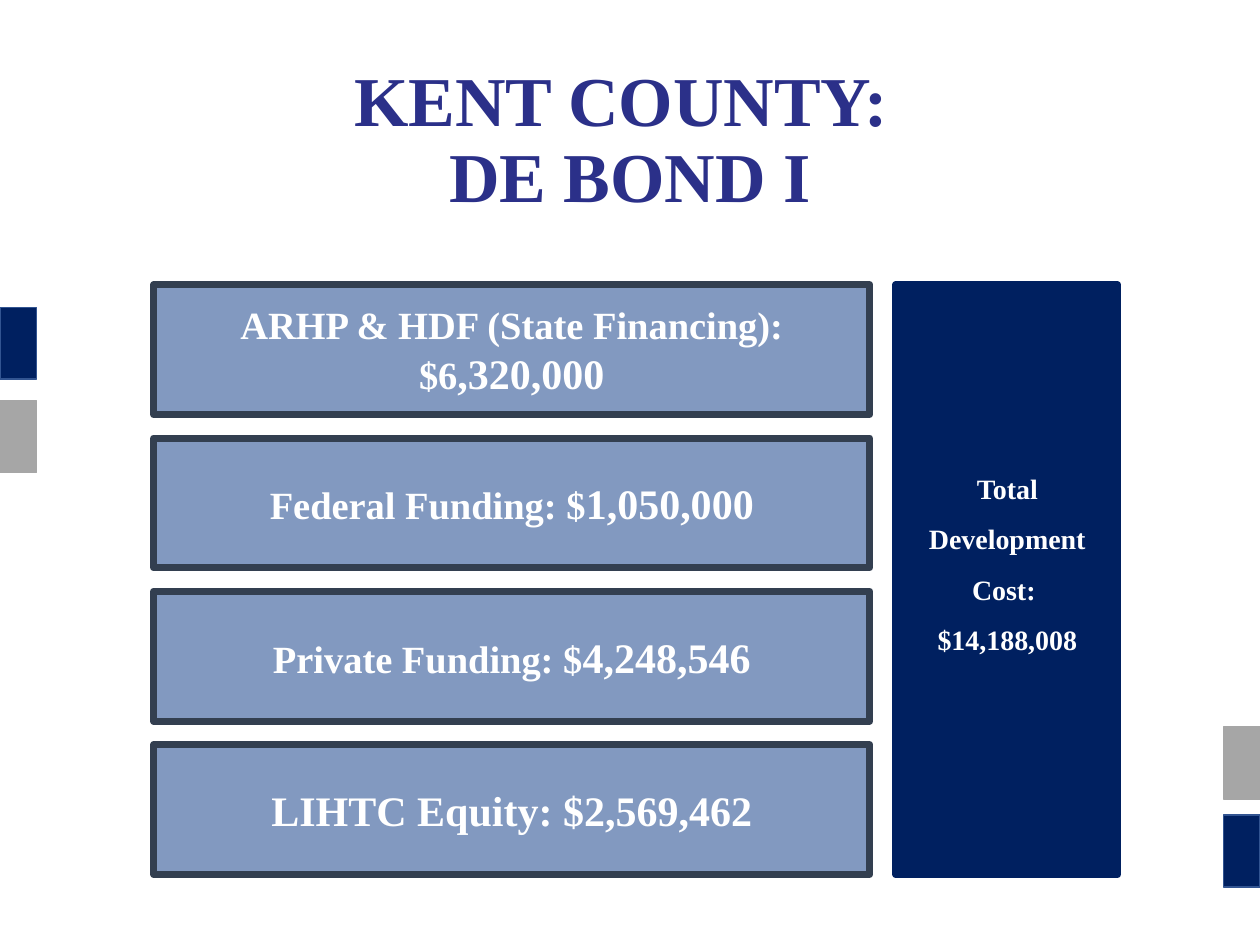
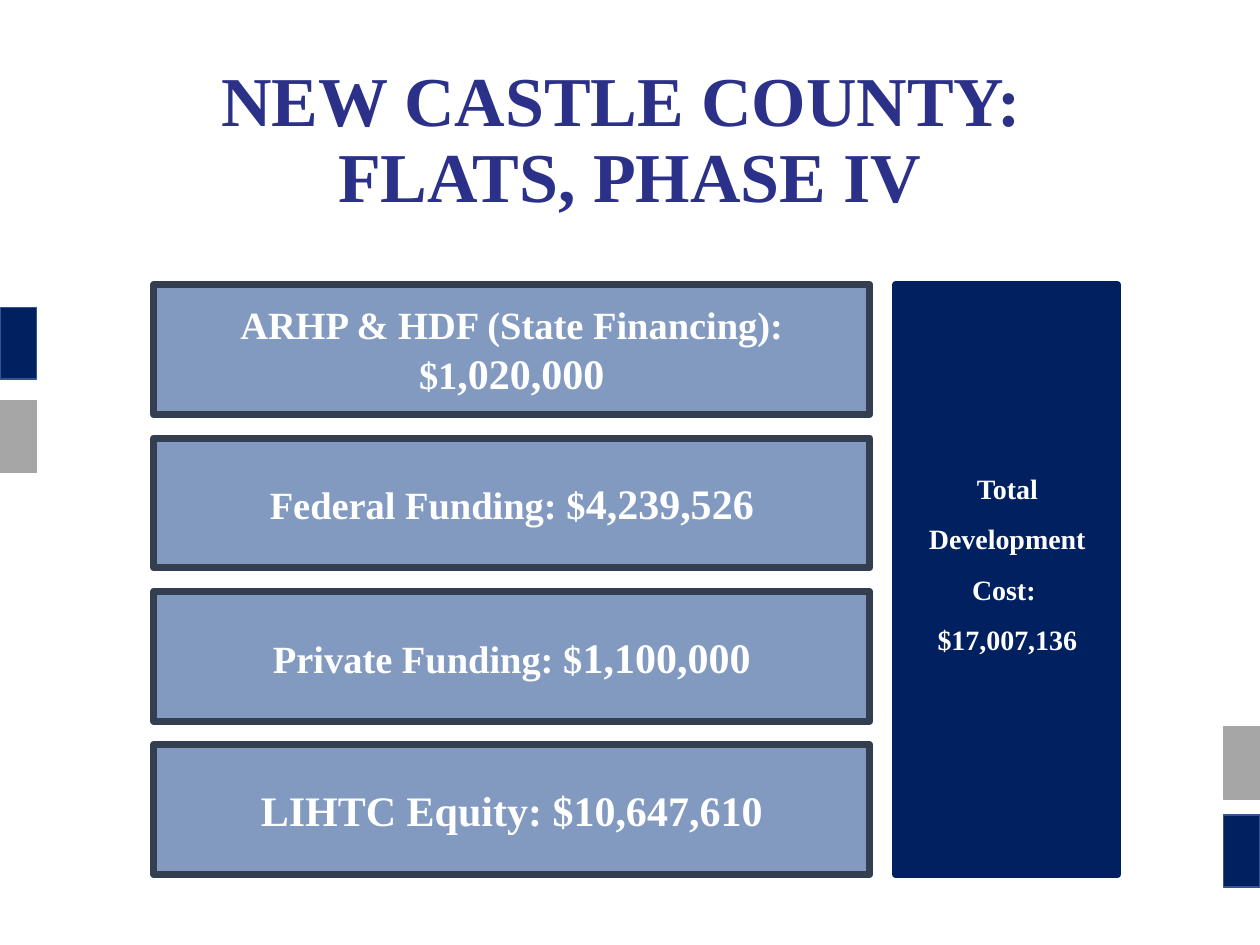
from dataclasses import dataclass
from typing import NamedTuple

from lxml import etree
from pptx import Presentation
from pptx.dml.color import RGBColor
from pptx.enum.shapes import MSO_SHAPE
from pptx.enum.text import MSO_ANCHOR, PP_ALIGN
from pptx.oxml.ns import qn
from pptx.shapes.autoshape import Shape
from pptx.slide import Slide
from pptx.util import Pt

RECT = MSO_SHAPE.RECTANGLE
CENTER = PP_ALIGN.CENTER
TOP, MIDDLE = MSO_ANCHOR.TOP, MSO_ANCHOR.MIDDLE


@dataclass(frozen=True)
class Theme:
    font: str = "Times New Roman"
    title: str = "2B3089"
    navy: str = "002060"
    edge: str = "325491"
    gray: str = "A6A6A6"
    blue: str = "2F5597"
    slate: str = "333F50"
    white: str = "FFFFFF"
    title_size: int = 40
    sum_size: int = 24
    label_size: int = 22
    total_size: int = 16


THEME = Theme()


class Box(NamedTuple):
    left: float
    top: float
    width: float
    height: float


class Tab(NamedTuple):
    left: float
    top: float
    fill: str
    edge: str


class Run(NamedTuple):
    text: str
    size: int


class Deal(NamedTuple):
    title: str
    bars: list[list[Run]]
    total: str


TITLE = Box(49.68, 28.8, 620.64, 104.4)
BAR = Box(87.84, 162.72, 409.2, 74.2)
BAR_STEP = 87.6
PANEL = Box(511.92, 162.72, 126.72, 337)
TOTAL = Box(519.12, 256.3, 113.04, 120.24)
TAB_WIDTH, TAB_HEIGHT = 20.88, 41.04
RIGHT = 720 - TAB_WIDTH
TABS = [
    Tab(RIGHT, 465.84, THEME.navy, THEME.edge),
    Tab(0, 175.68, THEME.navy, THEME.edge),
    Tab(RIGHT, 415.44, THEME.gray, THEME.gray),
    Tab(0, 228.96, THEME.gray, THEME.gray),
]


def split(label: str, amount: str) -> list[Run]:
    """Set the label small and the amount large."""
    return [Run(label, THEME.label_size), Run(amount, THEME.sum_size)]


def equity(amount: str) -> list[Run]:
    return [Run(f"LIHTC Equity: {amount}", THEME.sum_size)]


DEALS = [
    Deal("KENT COUNTY: \nDE BOND I", [
        split("ARHP & HDF (State Financing): $6", ",320,000"),
        split("Federal Funding: $", "1,050,000"),
        split("Private Funding: $", "4,248,546"),
        equity("$2,569,462"),
    ], "$14,188,008"),
    Deal("NEW CASTLE COUNTY: \nFLATS, PHASE IV", [
        split("ARHP & HDF (State Financing): $1", ",020,000"),
        split("Federal Funding: $", "4,239,526"),
        split("Private Funding: $", "1,100,000"),
        equity("$10,647,610"),
    ], "$17,007,136"),
]


def write(shape: Shape, paras: list[list[Run]], *, color: str = THEME.white,
          spacing: float = 1.0, anchor: MSO_ANCHOR = MIDDLE) -> None:
    """Fill a shape with centred bold text; a newline is a line break."""
    frame = shape.text_frame
    frame.word_wrap = True
    frame.vertical_anchor = anchor
    for index, runs in enumerate(paras):
        para = frame.add_paragraph() if index else frame.paragraphs[0]
        para.alignment = CENTER
        para.line_spacing = spacing
        for text, size in runs:
            for row, line in enumerate(text.split("\n")):
                if row:
                    para.add_line_break()
                run = para.add_run()
                run.text = line
                run.font.name = THEME.font
                run.font.size = Pt(size)
                run.font.bold = True
                run.font.color.rgb = RGBColor.from_string(color)


def add_rect(slide: Slide, box: Box, fill: str, edge: str, width: float,
             alpha: int = 100) -> Shape:
    shape = slide.shapes.add_shape(RECT, *map(Pt, box))
    shape.shadow.inherit = False
    shape.fill.solid()
    shape.fill.fore_color.rgb = RGBColor.from_string(fill)
    shape.line.color.rgb = RGBColor.from_string(edge)
    shape.line.width = Pt(width)
    if alpha < 100:
        tint = shape._element.spPr.find(f"{qn('a:solidFill')}/{qn('a:srgbClr')}")
        etree.SubElement(tint, qn("a:alpha"), val=str(alpha * 1000))
    return shape


def add_text(slide: Slide, box: Box) -> Shape:
    return slide.shapes.add_textbox(*map(Pt, box))


def add_deal(slide: Slide, deal: Deal) -> None:
    write(add_text(slide, TITLE), [[Run(deal.title, THEME.title_size)]],
          color=THEME.title, spacing=0.9)
    for tab in TABS:
        box = Box(tab.left, tab.top, TAB_WIDTH, TAB_HEIGHT)
        add_rect(slide, box, tab.fill, tab.edge, 1)
    add_rect(slide, PANEL, THEME.navy, THEME.navy, 4)
    for index, runs in enumerate(deal.bars):
        box = BAR._replace(top=BAR.top + index * BAR_STEP)
        bar = add_rect(slide, box, THEME.blue, THEME.slate, 4, alpha=60)
        write(bar, [runs])
    lines = ["Total Development Cost: ", deal.total]
    write(add_text(slide, TOTAL),
          [[Run(line, THEME.total_size)] for line in lines],
          spacing=1.5, anchor=TOP)


def main() -> None:
    deck = Presentation()
    deck.slide_width, deck.slide_height = Pt(720), Pt(540)
    blank = deck.slide_layouts[6]
    for deal in DEALS:
        add_deal(deck.slides.add_slide(blank), deal)
    deck.save("out.pptx")


if __name__ == "__main__":
    main()
